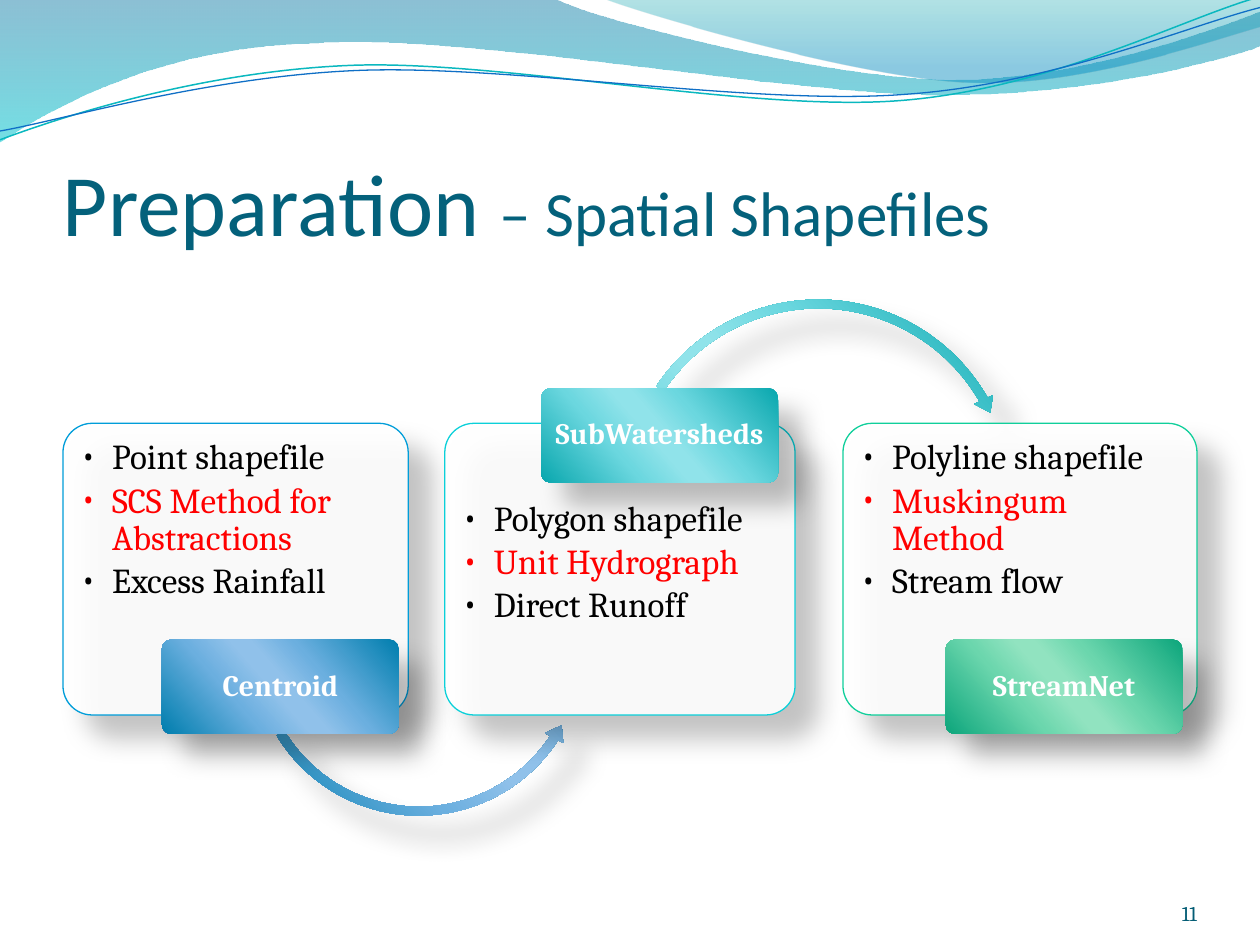
from dataclasses import dataclass
from typing import Optional

from lxml import etree
from pptx import Presentation
from pptx.dml.color import RGBColor
from pptx.enum.shapes import MSO_SHAPE
from pptx.enum.text import MSO_ANCHOR, PP_ALIGN
from pptx.oxml.ns import qn
from pptx.util import Emu, Inches, Pt

ROUNDED = MSO_SHAPE.ROUNDED_RECTANGLE
ARC_OVER = MSO_SHAPE.CIRCULAR_ARROW
ARC_UNDER = MSO_SHAPE.LEFT_CIRCULAR_ARROW
TOP, MIDDLE, BOTTOM = MSO_ANCHOR.TOP, MSO_ANCHOR.MIDDLE, MSO_ANCHOR.BOTTOM
LEFT, CENTER, RIGHT = PP_ALIGN.LEFT, PP_ALIGN.CENTER, PP_ALIGN.RIGHT

COLUMNS, ROWS = 100, 75
CARD_TOP, CARD_HEIGHT, BODY_HEIGHT = 33.6, 23.15, 18.2
LABEL_WIDTH, LABEL_HEIGHT = 18.8, 7.5
BULLET_COLORS = ("000000", "FF0000", "000000")
STOP_POSITIONS = (0, 33, 47, 53, 68, 100)

Point = tuple[float, float]
Area = tuple[float, float, float, float]
Stop = tuple[int, str, int]

deck = Presentation()
deck.slide_width, deck.slide_height = Inches(10), Inches(7.5)
page = deck.slides.add_slide(deck.slide_layouts[6])


@dataclass
class Wave:
    start: Point
    segments: list[tuple[Point, ...]]
    stops: tuple[Stop, ...] = ()
    line: Optional[str] = None
    weight: float = 0


@dataclass
class Arrow:
    kind: MSO_SHAPE
    area: Area
    adjustments: tuple[float, ...]


@dataclass
class Card:
    left: float
    width: float
    body_top: float
    line: str
    shades: tuple[str, str, str]
    bullets: tuple[str, str, str]
    label: str
    label_at: Point
    arrow: Optional[Arrow] = None


WAVES = [
    Wave((0, 0), [((4.4, -0.01),),
                  ((4.76, 0.17), (6.64, 0.63), (7.58, 0.63)),
                  ((8.53, 0.63), (9.58, 0.26), (10, 0.09)),
                  ((10.01, 0.36),),
                  ((9.83, 0.44), (8.7, 0.76), (7.46, 0.75)),
                  ((6.22, 0.75), (3.82, 0.28), (2.57, 0.34)),
                  ((1.29, 0.36), (0.46, 0.83), (-0.01, 1.13))],
         stops=((0, "0074A1", 45), (100, "00C6CF", 55))),
    Wave((4.79, -0.01), [((5.09, 0.11), (6.82, 0.62), (7.69, 0.65)),
                         ((8.56, 0.69), (9.61, 0.32), (10, 0.21)),
                         ((10, 0),)],
         stops=((0, "00A1A9", 30), (80, "008BBF", 45))),
    Wave((0, 1.11), [((0.48, 0.93), (1.58, 0.57), (2.77, 0.52)),
                     ((3.95, 0.47), (5.93, 0.89), (7.13, 0.8)),
                     ((8.33, 0.71), (9.38, 0.15), (9.98, -0.02))],
         line="0AB8BF", weight=0.85),
    Wave((0, 1.04), [((0.47, 0.96), (1.64, 0.61), (2.83, 0.56)),
                     ((4.03, 0.51), (5.97, 0.84), (7.17, 0.75)),
                     ((8.36, 0.67), (9.41, 0.21), (10, 0.06))],
         line="0F6FC6", weight=0.75),
]

CARDS = [
    Card(5, 27.4, CARD_TOP, "009DD9", ("007EAE", "6BAFDF", "90C1EA"),
         ("Point shapefile", "SCS Method for Abstractions", "Excess Rainfall"),
         "Centroid", (12.85, 50.75),
         Arrow(ARC_UNDER, (19.6, 37.9, 27.3, 27.3), (0.026, 3.11, 19.91, 89.29, 0.03))),
    Card(35.3, 27.8, 38.5, "0BD0D9", ("09A7AE", "6BD7DF", "90E3EA"),
         ("Polygon shapefile", "Unit Hydrograph", "Direct Runoff"),
         "SubWatersheds", (42.95, 30.8),
         Arrow(ARC_OVER, (49, 23.3, 31.9, 31.9), (0.022, 2.64, 198.07, 128.21, 0.026))),
    Card(66.9, 28.1, CARD_TOP, "10CF9B", ("0DA67C", "6BD6AD", "91E3C0"),
         ("Polyline shapefile", "Muskingum Method", "Stream flow"),
         "StreamNet", (75.05, 50.75)),
]


def color(value: str) -> RGBColor:
    return RGBColor.from_string(value)


def place(area: Area) -> list[Emu]:
    column, row = deck.slide_width / COLUMNS, deck.slide_height / ROWS
    return [Emu(round(size * unit)) for size, unit in zip(area, (column, row) * 2)]


def add_color(parent, value: str, opacity: float) -> None:
    tone = etree.SubElement(parent, qn("a:srgbClr"), val=value)
    etree.SubElement(tone, qn("a:alpha"), val=str(round(opacity * 1000)))


def fill_gradient(shape, stops: tuple[Stop, ...], angle: int) -> None:
    shape.fill.gradient()
    shape.fill.gradient_angle = 360 - angle
    stop_list = shape._element.spPr.find(".//" + qn("a:gsLst"))
    for old in list(stop_list):
        stop_list.remove(old)
    for position, value, opacity in stops:
        stop = etree.SubElement(stop_list, qn("a:gs"), pos=str(position * 1000))
        add_color(stop, value, opacity)


def draw_shape(kind: MSO_SHAPE, area: Area, adjustments: tuple[float, ...]):
    shape = page.shapes.add_shape(kind, *place(area))
    for index, value in enumerate(adjustments):
        shape.adjustments[index] = value
    shape.shadow.inherit = False
    effects = shape._element.spPr.find(qn("a:effectLst"))
    shadow = etree.SubElement(effects, qn("a:outerShdw"), blurRad=str(Pt(15)), dist=str(Pt(18)),
                              dir=str(45 * 60000), sy="90000", rotWithShape="0")
    add_color(shadow, "000000", 25.5)
    return shape


def draw_shaded(kind: MSO_SHAPE, area: Area, adjustments: tuple[float, ...],
                shades: tuple[str, str, str]) -> None:
    shape = draw_shape(kind, area, adjustments)
    tones = shades + shades[::-1]
    stops = tuple((position, tone, 100) for position, tone in zip(STOP_POSITIONS, tones))
    fill_gradient(shape, stops, 139)
    shape.line.fill.background()


def add_frame(area: Area, anchor: MSO_ANCHOR, insets: Area):
    frame = page.shapes.add_textbox(*place(area)).text_frame
    sides = ("margin_left", "margin_top", "margin_right", "margin_bottom")
    formats = {"word_wrap": True, "vertical_anchor": anchor,
               **{side: Inches(inset) for side, inset in zip(sides, insets)}}
    for name, value in formats.items():
        setattr(frame, name, value)
    return frame


def add_span(para, text: str, size: float, tone: str, font: str = "Cambria",
             bold: bool = False) -> None:
    span = para.add_run()
    span.text = text
    for name, value in {"name": font, "size": Pt(size), "bold": bold}.items():
        setattr(span.font, name, value)
    span.font.color.rgb = color(tone)


def format_para(para, align: PP_ALIGN, spacing: float = 1, after: float = 0,
                level: int = 0) -> None:
    formats = {"alignment": align, "line_spacing": spacing, "space_after": Pt(after),
               "level": level}
    for name, value in formats.items():
        setattr(para, name, value)


def draw_bullets(area: Area, bullets: tuple[str, str, str]) -> None:
    frame = add_frame(area, TOP, (0.14, 0.13, 0.14, 0.14))
    for index, (text, tone) in enumerate(zip(bullets, BULLET_COLORS)):
        para = frame.add_paragraph() if index else frame.paragraphs[0]
        format_para(para, LEFT, 0.9, 3, 1)
        properties = para._p.get_or_add_pPr()
        properties.set("marL", str(Inches(0.25)))
        properties.set("indent", str(-Inches(0.25)))
        etree.SubElement(properties, qn("a:buFont"), typeface="Cambria")
        etree.SubElement(properties, qn("a:buChar"), char="•")
        add_span(para, text, 20, tone)


def draw_wave(wave: Wave) -> None:
    builder = page.shapes.build_freeform(*map(Inches, wave.start))
    anchors = [tuple(map(Inches, segment[-1])) for segment in wave.segments]
    builder.add_line_segments(anchors, close=bool(wave.stops))
    shape = builder.convert_to_shape()
    lines = shape._element.spPr.findall(".//" + qn("a:lnTo"))
    for line, segment in zip(lines, wave.segments):
        if len(segment) == 3:
            curve = etree.Element(qn("a:cubicBezTo"))
            for x, y in segment:
                etree.SubElement(curve, qn("a:pt"), x=str(Inches(x) - shape.left),
                                 y=str(Inches(y) - shape.top))
            line.getparent().replace(line, curve)
    shape.shadow.inherit = False
    if wave.stops:
        fill_gradient(shape, wave.stops, 90)
        shape.line.fill.background()
    else:
        shape.fill.background()
        shape.line.color.rgb = color(wave.line)
        shape.line.width = Pt(wave.weight)


def draw_card(card: Card) -> None:
    box = draw_shape(ROUNDED, (card.left, CARD_TOP, card.width, CARD_HEIGHT), (0.1,))
    box.fill.solid()
    box.fill.fore_color.rgb = color("FFFFFF")
    tone = box._element.spPr.find(qn("a:solidFill"))[0]
    etree.SubElement(tone, qn("a:alpha"), val="90000")
    box.line.color.rgb = color(card.line)
    box.line.width = Pt(0.75)
    draw_bullets((card.left, card.body_top, card.width, BODY_HEIGHT), card.bullets)
    if card.arrow:
        draw_shaded(card.arrow.kind, card.arrow.area, card.arrow.adjustments, card.shades)
    label_area = (*card.label_at, LABEL_WIDTH, LABEL_HEIGHT)
    draw_shaded(ROUNDED, label_area, (0.1,), card.shades)
    para = add_frame(label_area, MIDDLE, (0.04, 0.02, 0.04, 0.02)).paragraphs[0]
    format_para(para, CENTER, 0.9, 6)
    add_span(para, card.label, 17, "FFFFFF", bold=True)


def draw_text(area: Area, insets: Area, align: PP_ALIGN):
    para = add_frame(area, BOTTOM, insets).paragraphs[0]
    format_para(para, align)
    return para


for wave in WAVES:
    draw_wave(wave)
title = draw_text((5, 7.65, 90, 12.5), (0, 0.05, 0, 0), LEFT)
add_span(title, "Preparation ", 50, "04617B", "Calibri")
add_span(title, "– Spatial Shapefiles", 36, "04617B", "Calibri")
for card in CARDS:
    draw_card(card)
add_span(draw_text((86.7, 69.5, 8.3, 4), (0, 0, 0, 0), RIGHT), "11", 12, "045D75")
deck.save("out.pptx")
